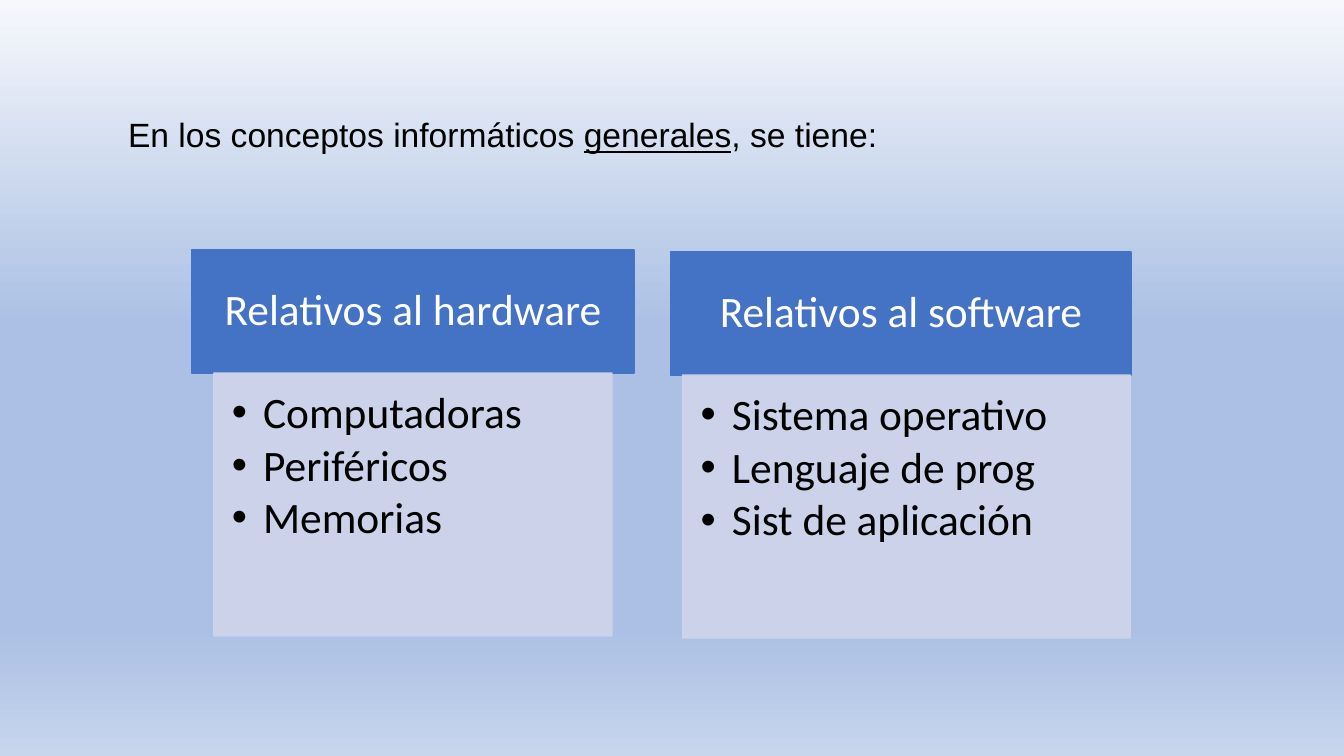
from copy import deepcopy
from dataclasses import dataclass

from lxml import etree
from pptx import Presentation
from pptx.dml.color import RGBColor
from pptx.enum import shapes, text
from pptx.oxml.ns import qn
from pptx.util import Inches, Pt


@dataclass(frozen=True)
class Theme:
    sky: tuple = ((0, "F6F8FC"), (43, "ABC0E4"), (83, "ABC0E4"), (100, "C7D5ED"))
    header: str = "4472C4"
    body: str = "CFD5EA"
    body_alpha: int = 90
    dark: str = "000000"
    light: str = "FFFFFF"
    intro_font: str = "Arial"
    list_font: str = "Calibri"
    intro_size: int = 24
    list_size: int = 31


THEME = Theme()
HEADER_H, BODY_H = 1.22, 2.61
INDENT = 0.31
CARDS = [
    # header box (left, top, width), body offset and width, title, items
    ((1.9, 2.48, 4.39), (0.22, 3.95), "Relativos al hardware",
     ["Computadoras", "Periféricos", "Memorias"]),
    ((6.65, 2.5, 4.57), (0.12, 4.44), "Relativos al software",
     ["Sistema operativo", "Lenguaje de prog", "Sist de aplicación"]),
]


def paint_background(slide):
    fill = slide.background.fill
    fill.gradient()
    fill.gradient_angle = 270
    stops = fill.gradient_stops
    gs_list = stops[0]._gs.getparent()
    for _ in range(len(THEME.sky) - len(stops)):
        gs_list.append(deepcopy(gs_list[-1]))
    for stop, (position, color) in zip(fill.gradient_stops, THEME.sky):
        stop.position = position / 100
        stop.color.rgb = RGBColor.from_string(color)


def set_frame(sp, insets, anchor):
    tf = sp.text_frame
    tf.word_wrap = True
    tf.vertical_anchor = anchor
    tf.margin_left, tf.margin_top, tf.margin_right, tf.margin_bottom = map(Inches, insets)
    return tf


def add_run(p, words, *, font, size, color, underline=False):
    r = p.add_run()
    r.text = words
    r.font.name, r.font.size, r.font.underline = font, Pt(size), underline
    r.font.color.rgb = RGBColor.from_string(color)


def add_bullet(p):
    pPr = p._p.get_or_add_pPr()
    pPr.set("marL", str(Inches(INDENT)))
    pPr.set("indent", str(-Inches(INDENT)))
    etree.SubElement(pPr, qn("a:buFont")).set("typeface", "Arial")
    etree.SubElement(pPr, qn("a:buChar")).set("char", "•")


def add_panel(slide, box, color, alpha=100):
    sp = slide.shapes.add_shape(shapes.MSO_SHAPE.RECTANGLE, *map(Inches, box))
    sp.shadow.inherit = False
    sp.line.width = Pt(1)
    sp.line.fill.solid()
    sp.fill.solid()
    for fill in (sp.fill, sp.line.fill):
        fill.fore_color.rgb = RGBColor.from_string(color)
    if alpha < 100:
        for clr in sp._element.spPr.iter(qn("a:srgbClr")):
            etree.SubElement(clr, qn("a:alpha")).set("val", str(alpha * 1000))
    return sp


def add_intro(slide, box):
    sp = slide.shapes.add_textbox(*map(Inches, box))
    tf = set_frame(sp, (0.35, 0.05, 0.1, 0.23), text.MSO_ANCHOR.MIDDLE)
    for words, underline in (("En los conceptos informáticos ", False),
                             ("generales", True), (", se tiene:", False)):
        add_run(tf.paragraphs[0], words, font=THEME.intro_font, size=THEME.intro_size,
                color=THEME.dark, underline=underline)


def add_card(slide, header, body, title, items):
    left, top, width = header
    offset, body_width = body

    sp = add_panel(slide, (left, top, width, HEADER_H), THEME.header)
    p = set_frame(sp, (0.24, 0.14, 0.24, 0.14), text.MSO_ANCHOR.MIDDLE).paragraphs[0]
    p.alignment, p.line_spacing = text.PP_ALIGN.CENTER, 0.9
    add_run(p, title, font=THEME.list_font, size=THEME.list_size, color=THEME.light)

    sp = add_panel(slide, (left + offset, top + HEADER_H, body_width, BODY_H),
                   THEME.body, THEME.body_alpha)
    tf = set_frame(sp, (0.18, 0.18, 0.24, 0.27), text.MSO_ANCHOR.TOP)
    for i, item in enumerate(items):
        p = tf.add_paragraph() if i else tf.paragraphs[0]
        add_bullet(p)
        p.alignment, p.line_spacing, p.space_after = text.PP_ALIGN.LEFT, 0.9, Pt(4)
        add_run(p, item, font=THEME.list_font, size=THEME.list_size, color=THEME.dark)


def main():
    prs = Presentation()
    prs.slide_width, prs.slide_height = Inches(13.33), Inches(7.5)
    slide = prs.slides.add_slide(prs.slide_layouts[6])
    paint_background(slide)
    add_intro(slide, (0.92, 0.7, 11.5, 1.45))
    for card in CARDS:
        add_card(slide, *card)
    prs.save("out.pptx")


if __name__ == "__main__":
    main()
